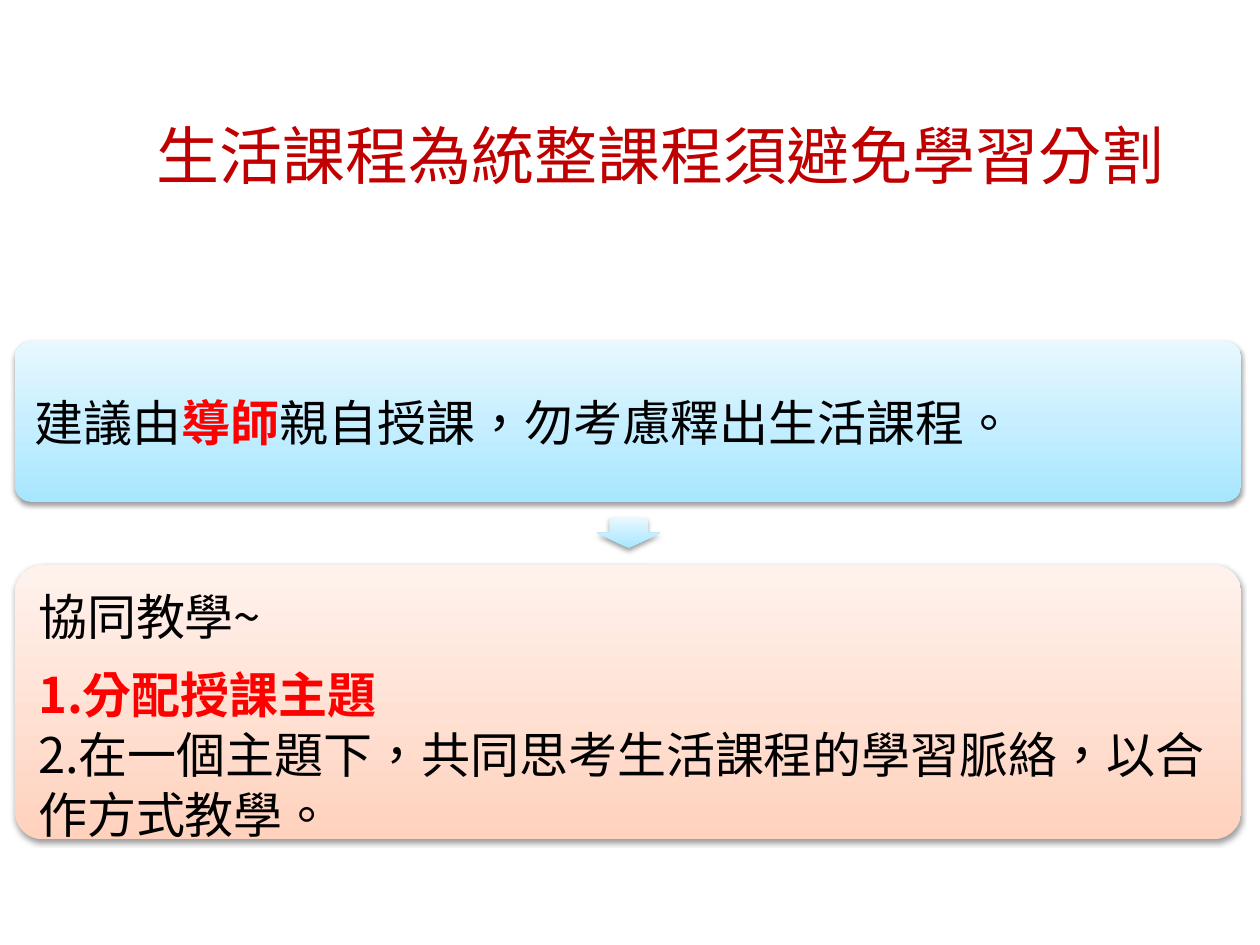
from lxml import etree
from pptx import Presentation
from pptx import util as u
from pptx.dml.color import RGBColor
from pptx.enum import lang, shapes, text
from pptx.oxml.ns import qn

BLUE = ("A7E6FF", "E7F8FF")
PEACH = ("FFD2BD", "FFF2ED")
RED, BLACK, TITLE_RED = "FF0000", "000000", "C00000"


def color(value):
    return RGBColor.from_string(value)


class Deck:
    title_font, body_font = "Arial", "Noto Sans CJK SC"
    title_size, body_size, line_height = u.Pt(36), u.Pt(28), u.Pt(34.3)
    inset = u.Inches(0.12)

    def __init__(self):
        self.presentation = Presentation()
        self.presentation.slide_width = u.Inches(10)
        self.presentation.slide_height = u.Inches(7.5)
        self.slide = self.presentation.slides.add_slide(self.presentation.slide_layouts[5])

    def place(self, left, top, width, height):
        across = self.presentation.slide_width / 100
        down = self.presentation.slide_height / 100
        return int(left * across), int(top * down), int(width * across), int(height * down)

    def format(self, run, name, size, hex_color, bold=False):
        font = run.font
        font.name, font.size, font.bold = name, size, bold
        font.color.rgb = color(hex_color)
        font.language_id = lang.MSO_LANGUAGE_ID.TRADITIONAL_CHINESE if hasattr(
            lang.MSO_LANGUAGE_ID, "TRADITIONAL_CHINESE") else lang.MSO_LANGUAGE_ID.TAIWAN \
            if hasattr(lang.MSO_LANGUAGE_ID, "TAIWAN") else lang.MSO_LANGUAGE_ID.CHINESE_HONG_KONG_SAR
        latin = run._r.rPr.find(qn("a:latin"))
        latin.addnext(etree.Element(qn("a:ea"), typeface=name))

    def title(self, wording, *area):
        shape = self.slide.shapes.title
        shape.left, shape.top, shape.width, shape.height = self.place(*area)
        frame = shape.text_frame
        frame.text = wording
        frame.auto_size = text.MSO_AUTO_SIZE.NONE
        frame.vertical_anchor = text.MSO_ANCHOR.MIDDLE
        paragraph = frame.paragraphs[0]
        paragraph.alignment = text.PP_ALIGN.CENTER
        self.format(paragraph.runs[0], self.title_font, self.title_size, TITLE_RED)

    def block(self, preset, adjustments, gradient, *area):
        shape = self.slide.shapes.add_shape(preset, *self.place(*area))
        for index, value in enumerate(adjustments):
            shape.adjustments[index] = value
        shape.line.fill.background()
        shape.fill.gradient()
        shape.fill.gradient_angle = 90
        for stop, value in zip(shape.fill.gradient_stops, gradient):
            stop.color.rgb = color(value)
        self.shadow(shape)
        return shape

    def shadow(self, shape):
        shape.shadow.inherit = False
        effects = shape._element.spPr.find(qn("a:effectLst"))
        outer = etree.SubElement(effects, qn("a:outerShdw"), blurRad=str(u.Pt(3.1)),
                                 dist=str(u.Pt(1.6)), dir="5400000", rotWithShape="0")
        black = etree.SubElement(outer, qn("a:srgbClr"), val=BLACK)
        etree.SubElement(black, qn("a:alpha"), val="38000")

    def card(self, paragraphs, gradient, anchor, *area):
        shape = self.block(shapes.MSO_SHAPE.ROUNDED_RECTANGLE, [0.1], gradient, *area)
        frame = shape.text_frame
        frame.word_wrap = True
        frame.vertical_anchor = anchor
        frame.margin_left = frame.margin_right = self.inset
        frame.margin_top = frame.margin_bottom = u.Inches(0.1)
        for index, (space_after, runs) in enumerate(paragraphs):
            paragraph = frame.add_paragraph() if index else frame.paragraphs[0]
            paragraph.alignment = text.PP_ALIGN.LEFT
            paragraph.line_spacing = self.line_height
            paragraph.space_after = u.Pt(space_after)
            for wording, emphasis in runs:
                run = paragraph.add_run()
                run.text = wording
                self.format(run, self.body_font, self.body_size,
                            RED if emphasis else BLACK, emphasis)

    def arrow(self, gradient, *area):
        self.block(shapes.MSO_SHAPE.DOWN_ARROW, [0.6, 0.5], gradient, *area)


def main():
    deck = Deck()
    deck.title("生活課程為統整課程須避免學習分割", 8.6, 11.2, 87.7, 10.2)
    deck.card([(0, [("建議由", False), ("導師", True),
                    ("親自授課，勿考慮釋出生活課程。", False)])],
              BLUE, text.MSO_ANCHOR.MIDDLE, 1.2, 36.1, 97.3, 17)
    deck.arrow(BLUE, 47.4, 54.8, 5, 3.2)
    deck.card([(9.8, [("協同教學~", False)]),
               (0, [("1.分配授課主題", True)]),
               (0, [("2.在一個主題下，共同思考生活課程的學習脈絡，以合作方式教學。", False)])],
              PEACH, text.MSO_ANCHOR.TOP, 1.2, 59.8, 97.3, 29)
    deck.presentation.save("out.pptx")


if __name__ == "__main__":
    main()
